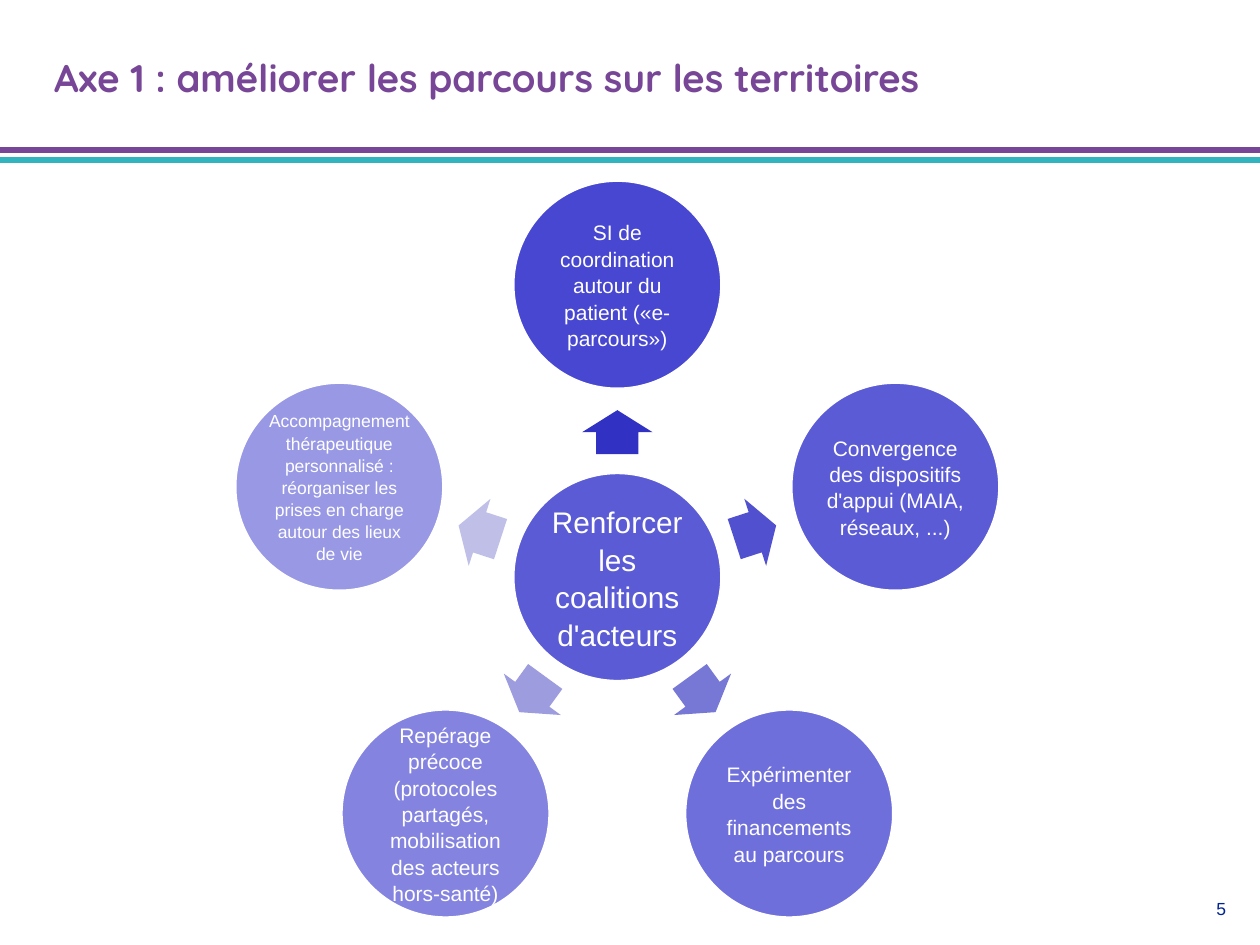
import math
from dataclasses import dataclass

import pptx
import pptx.dml.color
import pptx.enum.shapes
import pptx.enum.text
import pptx.oxml
import pptx.oxml.ns
import pptx.util
from pptx.util import Inches, Pt

RGB = pptx.dml.color.RGBColor
PURPLE = RGB(0x78, 0x46, 0x96)
TEAL = RGB(0x32, 0xB4, 0xBE)
NAVY = RGB(0x00, 0x23, 0x95)
BLUE = RGB(0x33, 0x33, 0xCC)
WHITE = RGB(0xFF, 0xFF, 0xFF)

SHAPE = pptx.enum.shapes.MSO_SHAPE
ALIGN = pptx.enum.text.PP_ALIGN
MIDDLE = pptx.enum.text.MSO_ANCHOR.MIDDLE

# Wheel geometry, in inches
MID_X, MID_Y = 4.9, 4.58
DISC = 1.66
ORBIT = 2.32
ARROW_ORBIT = 1.15
ARROW_W, ARROW_H = 0.35, 0.56


@dataclass
class Spoke:
    text: str
    alpha: int
    arrow: RGB
    size: int = 12
    inset: float = 0.02


SPOKES = [
    Spoke("SI de coordination autour du patient («e-parcours»)",
          90, RGB(0x31, 0x31, 0xC3)),
    Spoke("Convergence des dispositifs d'appui (MAIA, réseaux, ...)",
          80, RGB(0x51, 0x51, 0xCF)),
    Spoke("Expérimenter des financements au parcours",
          70, RGB(0x77, 0x77, 0xD5)),
    Spoke("Repérage précoce (protocoles partagés, mobilisation des acteurs "
          "hors-santé)", 60, RGB(0x9C, 0x9C, 0xDE)),
    Spoke("Accompagnement thérapeutique personnalisé : réorganiser les prises "
          "en charge autour des lieux de vie",
          50, RGB(0xBF, 0xBF, 0xE7), 10, 0.01),
]


def write(frame, text: str, font: str, size: int, color: RGB, align) -> None:
    frame.text = text
    frame.word_wrap = True
    para = frame.paragraphs[0]
    para.alignment = align
    style = para.runs[0].font
    style.name = font
    style.size = Pt(size)
    style.color.rgb = color


def add_rule(slide, y: float, color: RGB) -> None:
    rule = slide.shapes.add_connector(
        pptx.enum.shapes.MSO_CONNECTOR.STRAIGHT,
        0, Inches(y), Inches(10), Inches(y))
    rule.line.color.rgb = color
    rule.line.width = Pt(3)
    props = rule.element.spPr
    props.append(pptx.oxml.ns.qn and pptx.oxml.parse_xml(
        f'<a:effectLst {pptx.oxml.ns.nsdecls("a")}/>'))


def add_shape(slide, kind, x: float, y: float, w: float, h: float,
              color: RGB):
    """Add a plain filled shape centred on x, y."""
    shape = slide.shapes.add_shape(
        kind, Inches(x - w / 2), Inches(y - h / 2), Inches(w), Inches(h))
    shape.shadow.inherit = False
    shape.fill.solid()
    shape.fill.fore_color.rgb = color
    shape.line.fill.background()
    return shape


def add_disc(slide, x: float, y: float, text: str, alpha: int, size: int,
             inset: float = 0.02) -> None:
    disc = add_shape(slide, SHAPE.OVAL, x, y, DISC, DISC, BLUE)
    tint = disc.element.spPr.find(".//" + pptx.oxml.ns.qn("a:srgbClr"))
    tint.append(pptx.oxml.parse_xml(
        f'<a:alpha {pptx.oxml.ns.nsdecls("a")} val="{alpha * 1000}"/>'))
    disc.line.color.rgb = WHITE
    disc.line.width = Pt(2)
    frame = disc.text_frame
    frame.margin_left = frame.margin_right = Inches(inset)
    frame.margin_top = frame.margin_bottom = Inches(inset)
    frame.vertical_anchor = MIDDLE
    write(frame, text, "Arial", size, WHITE, ALIGN.CENTER)
    frame.paragraphs[0].line_spacing = 1.05


def add_arrow(slide, x: float, y: float, turn: float, color: RGB) -> None:
    arrow = add_shape(slide, SHAPE.RIGHT_ARROW, x, y, ARROW_W, ARROW_H, color)
    arrow.adjustments[0] = 0.6
    arrow.adjustments[1] = 0.5
    arrow.rotation = turn


def main() -> None:
    deck = pptx.Presentation()
    deck.slide_width, deck.slide_height = Inches(10), Inches(7.5)
    slide = deck.slides.add_slide(deck.slide_layouts[5])

    # Title and rules
    title = slide.shapes.title
    title.left, title.top = Inches(0.33), Inches(0.24)
    title.width, title.height = Inches(8.92), Inches(0.75)
    title.text_frame.vertical_anchor = MIDDLE
    write(title.text_frame, "Axe 1 : améliorer les parcours sur les territoires",
          "Quicksand", 22, PURPLE, ALIGN.LEFT)
    title.text_frame.paragraphs[0].runs[0].font.bold = True
    add_rule(slide, 1.19, PURPLE)
    add_rule(slide, 1.27, TEAL)

    # Hub, then spokes clockwise from the top
    add_disc(slide, MID_X, MID_Y, "Renforcer les coalitions d'acteurs", 80, 17)
    for i, spoke in enumerate(SPOKES):
        turn = (270 + i * 360 / len(SPOKES)) % 360
        cos, sin = math.cos(math.radians(turn)), math.sin(math.radians(turn))
        add_arrow(slide, MID_X + ARROW_ORBIT * cos, MID_Y + ARROW_ORBIT * sin,
                  turn, spoke.arrow)
        add_disc(slide, MID_X + ORBIT * cos, MID_Y + ORBIT * sin,
                 spoke.text, spoke.alpha, spoke.size, spoke.inset)

    # Page number
    page = slide.shapes.add_textbox(
        Inches(9.33), Inches(7.08), Inches(0.5), Inches(0.5))
    write(page.text_frame, "5", "Arial", 10, NAVY, ALIGN.RIGHT)

    deck.save("out.pptx")


if __name__ == "__main__":
    main()
